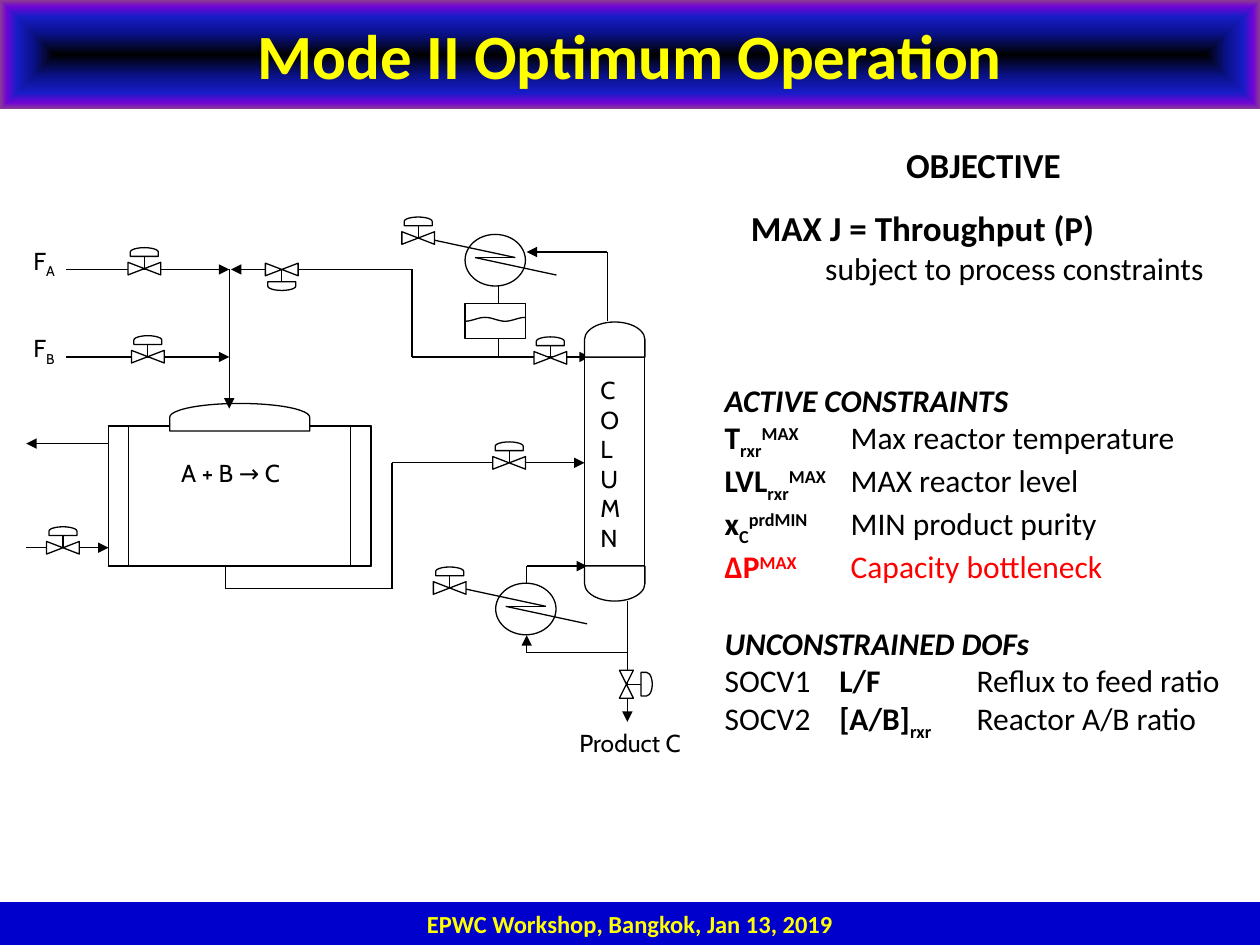
import math
from dataclasses import dataclass
from itertools import pairwise
from typing import Any

from lxml import etree
from pptx import Presentation
from pptx.dml.color import RGBColor
from pptx.enum import shapes, text
from pptx.oxml import ns
from pptx.util import Pt

KIND = shapes.MSO_SHAPE
CENTER = text.PP_ALIGN.CENTER
MIDDLE = text.MSO_ANCHOR.MIDDLE


def color(value):
    return RGBColor.from_string(value)


def add_element(parent, tag, **attributes):
    return etree.SubElement(parent, ns.qn(tag), attributes)


def add_span(para, words, size=18, font="Calibri", ink="000000", bold=False,
             italic=False, baseline=0):
    """Append text; baseline is a percentage, negative for a subscript."""
    span = para.add_run()
    span.text = words
    span.font.size, span.font.name = Pt(size), font
    span.font.bold, span.font.italic = bold, italic
    span.font.color.rgb = color(ink)
    if baseline:
        span.font._element.set("baseline", str(baseline * 1000))
    return span


def next_para(frame):
    first = frame.paragraphs[0]
    return frame.add_paragraph() if first.runs else first


def set_tabs(para, *stops):
    tabs = add_element(para._p.get_or_add_pPr(), "a:tabLst")
    for stop in stops:
        add_element(tabs, "a:tab", pos=str(Pt(stop)), algn="l")


@dataclass
class Region:
    """Shapes placed in points from a left top corner."""
    shapes: Any
    left: float
    top: float

    def at(self, x, y):
        return Pt(self.left + x), Pt(self.top + y)

    def shape(self, kind, x, y, width, height, angle=0, fill="FFFFFF", outline="000000"):
        shape = self.shapes.add_shape(kind, *self.at(x, y), Pt(width), Pt(height))
        shape.rotation = angle
        shape.shadow.inherit = False
        shape.fill.solid()
        shape.fill.fore_color.rgb = color(fill)
        if outline:
            shape.line.color.rgb, shape.line.width = color(outline), Pt(0.75)
        else:
            shape.line.fill.background()
        return shape

    def centered(self, kind, x, y, width, height, angle=0):
        return self.shape(kind, x - width / 2, y - height / 2, width, height, angle)

    def pipe(self, *points, arrow=True):
        """Straight segments through the points, with an arrowhead at the last."""
        for start, end in pairwise(points):
            line = self.shapes.add_connector(
                shapes.MSO_CONNECTOR.STRAIGHT, *self.at(*start), *self.at(*end))
            line.line.color.rgb, line.line.width = color("000000"), Pt(0.75)
            if arrow and end == points[-1]:
                add_element(line.line._get_or_add_ln(), "a:tailEnd", type="triangle")
            add_element(line._element.spPr, "a:effectLst")

    def frame(self, x, y, width, height):
        box = self.shapes.add_textbox(*self.at(x, y), Pt(width), Pt(height))
        box.text_frame.word_wrap = True
        return box.text_frame

    def label(self, x, y, width, height, *lines, subscript=""):
        frame = self.frame(x, y, width, height)
        for words in lines:
            para = next_para(frame)
            add_span(para, words, size=14, font="Cabin")
        if subscript:
            add_span(para, subscript, size=14, font="Cabin", baseline=-25)

    def valve(self, x, y, angle=270, body=(7.2, 18.7), bonnet=(5, 16), reach=9.5):
        """Control valve whose bonnet points along the angle."""
        dx, dy = math.cos(math.radians(angle)), math.sin(math.radians(angle))
        self.centered(KIND.FLOWCHART_COLLATE, x, y, *body, angle)
        self.centered(KIND.FLOWCHART_DELAY, x + reach * dx, y + reach * dy, *bonnet, angle)
        stem = reach - bonnet[0] / 2
        self.pipe((x, y), (x + stem * dx, y + stem * dy), arrow=False)

    def exchanger(self, x, y):
        self.centered(KIND.OVAL, x, y, 34.5, 29.5)
        zigzag = [(-35, -11.5), (11.5, -1.5), (-11.5, -1.5), (35, 8.5)]
        self.pipe(*[(x + dx, y + dy) for dx, dy in zigzag], arrow=False)


def draw_reactor(area, x, y, width=150, height=80, jacket=11.5):
    area.shape(KIND.RECTANGLE, x, y, width, height)
    for side in (x, x + width - jacket):
        area.shape(KIND.RECTANGLE, side, y, jacket, height)
    area.centered(KIND.FLOWCHART_DELAY, x + width / 2, y - 5, 15.8, 80, 270)
    area.label(x + 34.5, y + 15, 92, 24, "A + B → C")


def draw_drum(area, x, y, width=34.5, height=20, steps=24):
    area.shape(KIND.RECTANGLE, x, y, width, height)
    level = [area.at(x + width * step / steps,
                     y + 9 + 1.1 * math.cos(3 * math.pi * step / steps))
             for step in range(steps + 1)]
    builder = area.shapes.build_freeform(*level[0])
    builder.add_line_segments(level[1:], close=False)
    wave = builder.convert_to_shape()
    wave.shadow.inherit = False
    wave.fill.background()
    wave.line.color.rgb, wave.line.width = color("000000"), Pt(0.75)


def draw_column(area, x, y, width=34.5, height=119.5, cap=20):
    area.shape(KIND.RECTANGLE, x, y, width, height)
    for middle, angle in ((y - cap / 2, 270), (y + height + cap / 2, 90)):
        area.centered(KIND.FLOWCHART_DELAY, x + width / 2, middle, cap, width, angle)
    area.label(x + 2, y + 7, width, 99.5, *"COLUMN")


def draw_flowsheet(page, left, top):
    area = Region(page.shapes.add_group_shape().shapes, left, top)
    draw_reactor(area, 50, 125.4)

    area.pipe((117, 205.5), (117, 218.5), (212, 218.5), (212, 146.5), (322, 146.5))
    area.pipe((3, 195), (50, 195))
    area.pipe((50, 135.5), (3, 135.5))
    for y, name in ((36, "A"), (86, "B")):
        area.pipe((26, y), (119, y))
        area.label(0, y - 17, 40, 30, "F", subscript=name)
    area.pipe((119, 36), (119, 115.5))
    area.pipe((223.5, 86), (223.5, 36), (120, 36))
    area.pipe((223.5, 86), (325, 86))
    area.pipe((335, 65.5), (335, 26), (289, 26))
    area.pipe((273, 45), (273, 86), arrow=False)
    area.pipe((346.5, 225.5), (346.5, 294.5))
    area.pipe((346.5, 255), (289, 255), (289, 245))
    area.pipe((289, 215.5), (289, 205.5), (323.5, 205.5))

    draw_drum(area, 253.7, 55.5)
    area.exchanger(271, 30.7)
    area.exchanger(288.5, 230)
    for x, y in ((70.5, 35.5), (72.5, 85.8), (24, 195), (279, 146.5),
                 (302.5, 86.5), (227, 18), (245, 218)):
        area.valve(x, y)
    area.valve(149, 36, angle=90)
    area.valve(346, 273, angle=0, body=(8, 16), bonnet=(6.5, 13.5), reach=11.5)
    draw_column(area, 322, 86)
    area.label(312, 294.5, 81, 23, "Product C")


def write_title(page, left, top, width, height):
    title = page.shapes.title
    title.left, title.top, title.width, title.height = map(Pt, (left, top, width, height))
    fill = add_element(title._element.spPr, "a:gradFill", rotWithShape="1")
    stops = add_element(fill, "a:gsLst")
    for place, ink in ((0, "000000"), (40, "0A128C"), (70, "181CC7"),
                       (88, "7005D4"), (100, "8C3D91")):
        stop = add_element(stops, "a:gs", pos=str(place * 1000))
        add_element(stop, "a:srgbClr", val=ink)
    shade = add_element(fill, "a:path", path="rect")
    add_element(shade, "a:fillToRect", **dict.fromkeys("ltrb", "50000"))
    title.text_frame.vertical_anchor = MIDDLE
    para = title.text_frame.paragraphs[0]
    para.alignment = CENTER
    add_span(para, "Mode II Optimum Operation", size=36, ink="FFFF00", bold=True)


def write_footer(page, left, top, width, height):
    bar = Region(page.shapes, left, top).shape(
        KIND.RECTANGLE, 0, 0, width, height, fill="0000CC", outline=None)
    bar.text_frame.vertical_anchor = MIDDLE
    para = bar.text_frame.paragraphs[0]
    para.alignment = CENTER
    add_span(para, "EPWC Workshop, Bangkok, Jan 13, 2019", size=14, ink="FFFF00", bold=True)


def write_objective(page, left, top, width, height):
    frame = Region(page.shapes, left, top).frame(0, 0, width, height)
    para = next_para(frame)
    para.alignment, para.space_after = CENTER, Pt(12)
    add_span(para, "OBJECTIVE", size=20, bold=True)
    add_span(next_para(frame), "MAX J = Throughput (P)", size=20, bold=True)
    para = next_para(frame)
    set_tabs(para, 42.5)
    add_span(para, "\tsubject to process constraints")


def write_constraints(page, left, top, width, height):
    frame = Region(page.shapes, left, top).frame(0, 0, width, height)
    add_span(next_para(frame), "ACTIVE CONSTRAINTS", bold=True, italic=True)
    for symbol, low, high, meaning, ink in (
            ("T", "rxr", "MAX", "Max reactor temperature", "000000"),
            ("LVL", "rxr", "MAX", "MAX reactor level", "000000"),
            ("x", "C", "prdMIN", "MIN product purity", "000000"),
            ("∆P", "", "MAX", "Capacity bottleneck", "FF0000")):
        para = next_para(frame)
        set_tabs(para, 72)
        for words, baseline in ((symbol, 0), (low, -25), (high, 30)):
            if words:
                add_span(para, words, ink=ink, bold=True, baseline=baseline)
        add_span(para, "\t" + meaning, ink=ink)

    para = next_para(frame)
    para.space_before = Pt(22)
    add_span(para, "UNCONSTRAINED DOFs", bold=True, italic=True)
    for name, ratio, low, meaning in (("SOCV1", "L/F", "", "Reflux to feed ratio"),
                                      ("SOCV2", "[A/B]", "rxr", "Reactor A/B ratio")):
        para = next_para(frame)
        set_tabs(para, 65.5, 144)
        add_span(para, name + "\t")
        add_span(para, ratio, bold=True)
        if low:
            add_span(para, low, bold=True, baseline=-25)
        add_span(para, "\t" + meaning)


def main():
    deck = Presentation()
    deck.slide_width, deck.slide_height = Pt(720), Pt(540)
    page = deck.slides.add_slide(deck.slide_layouts.get_by_name("Title Only"))
    write_footer(page, 0, 515.5, 720, 24.5)
    write_title(page, 0, 0, 720, 62.5)
    draw_flowsheet(page, 12, 118)
    write_objective(page, 422, 78.5, 280, 90)
    write_constraints(page, 407, 214, 306, 204)
    deck.save("out.pptx")


if __name__ == "__main__":
    main()
